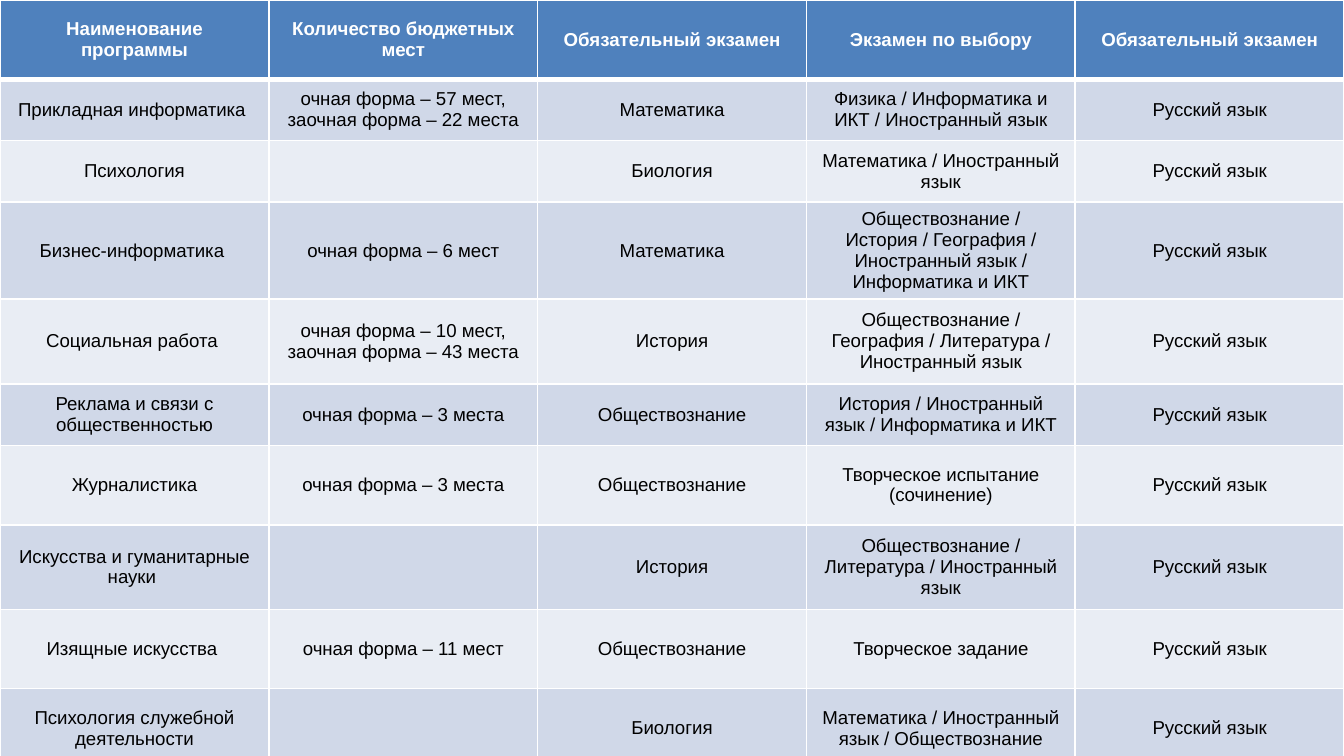
from lxml.etree import SubElement
from pptx import Presentation
from pptx.dml.color import RGBColor
from pptx.enum.text import MSO_ANCHOR, PP_ALIGN
from pptx.oxml.ns import qn
from pptx.util import Emu, Pt

PX = 4572  # 200 px to the inch
WHITE = RGBColor(0xFF, 0xFF, 0xFF)
BLACK = RGBColor(0x00, 0x00, 0x00)
HEADER_BLUE = RGBColor(0x4F, 0x81, 0xBD)
BAND_DARK = RGBColor(0xD0, 0xD8, 0xE8)
BAND_LIGHT = RGBColor(0xE9, 0xED, 0xF4)

HEADERS = ["Наименование программы", "Количество бюджетных мест", "Обязательный экзамен",
           "Экзамен по выбору", "Обязательный экзамен"]
# Programme, funded places, required exam, optional exam
PROGRAMMES = [
    ["Прикладная информатика ", "очная форма – 57 мест,\nзаочная форма – 22 места",
     "Математика", "Физика / Информатика и ИКТ / Иностранный язык"],
    ["Психология", "", "Биология", "Математика / Иностранный язык"],
    ["Бизнес-информатика ", "очная форма – 6 мест", "Математика",
     "Обществознание / История / География / Иностранный язык / Информатика и ИКТ"],
    ["Социальная работа ", "очная форма – 10 мест,\nзаочная форма – 43 места",
     "История", "Обществознание / География / Литература / Иностранный язык"],
    ["Реклама и связи с общественностью", "очная форма – 3 места",
     "Обществознание", "История / Иностранный язык / Информатика и ИКТ"],
    ["Журналистика", "очная форма – 3 места",
     "Обществознание", "Творческое испытание (сочинение)"],
    ["Искусства и гуманитарные науки ", "",
     "История", "Обществознание / Литература / Иностранный язык"],
    ["Изящные искусства ", "очная форма – 11 мест", "Обществознание", "Творческое задание"],
    ["Психология служебной деятельности", "",
     "Биология", "Математика / Иностранный язык / Обществознание"],
]
ROWS = [HEADERS] + [programme + ["Русский язык"] for programme in PROGRAMMES]
ROW_HEIGHTS = [118, 91, 92, 126, 126, 92, 118, 126, 118, 118]
COLUMN_WIDTH = 400


def add_border(cell, side, points):
    """Draw a solid white line on one side (L, R, T or B) of a cell."""
    line = SubElement(cell._tc.get_or_add_tcPr(), qn(f"a:ln{side}"), w=str(Pt(points)))
    fill = SubElement(line, qn("a:solidFill"))
    SubElement(fill, qn("a:srgbClr"), val=str(WHITE))


deck = Presentation()
deck.slide_width = Emu(2000 * PX)
deck.slide_height = Emu(1125 * PX)
page = deck.slides.add_slide(deck.slide_layouts[6])

table = page.shapes.add_table(
    len(ROWS), len(HEADERS), 0, 0,
    Emu(len(HEADERS) * COLUMN_WIDTH * PX), Emu(sum(ROW_HEIGHTS) * PX)).table
for column in table.columns:
    column.width = Emu(COLUMN_WIDTH * PX)

for row_index, (texts, height) in enumerate(zip(ROWS, ROW_HEIGHTS)):
    table.rows[row_index].height = Emu(height * PX)
    is_header = row_index == 0
    if is_header:
        row_fill = HEADER_BLUE
    else:
        row_fill = BAND_DARK if row_index % 2 else BAND_LIGHT

    for column_index, text in enumerate(texts):
        cell = table.cell(row_index, column_index)
        for side in "LRTB":
            under_header = (row_index, side) in [(0, "B"), (1, "T")]
            add_border(cell, side, 3 if under_header else 1)
        cell.fill.solid()
        cell.fill.fore_color.rgb = row_fill
        cell.vertical_anchor = MSO_ANCHOR.MIDDLE
        cell.text_frame.text = text
        for para in cell.text_frame.paragraphs:
            para.alignment = PP_ALIGN.CENTER
            for span in para.runs:
                span.font.name = "Arial"
                span.font.size = Pt(10)
                span.font.bold = is_header
                span.font.color.rgb = WHITE if is_header else BLACK

deck.save("out.pptx")
